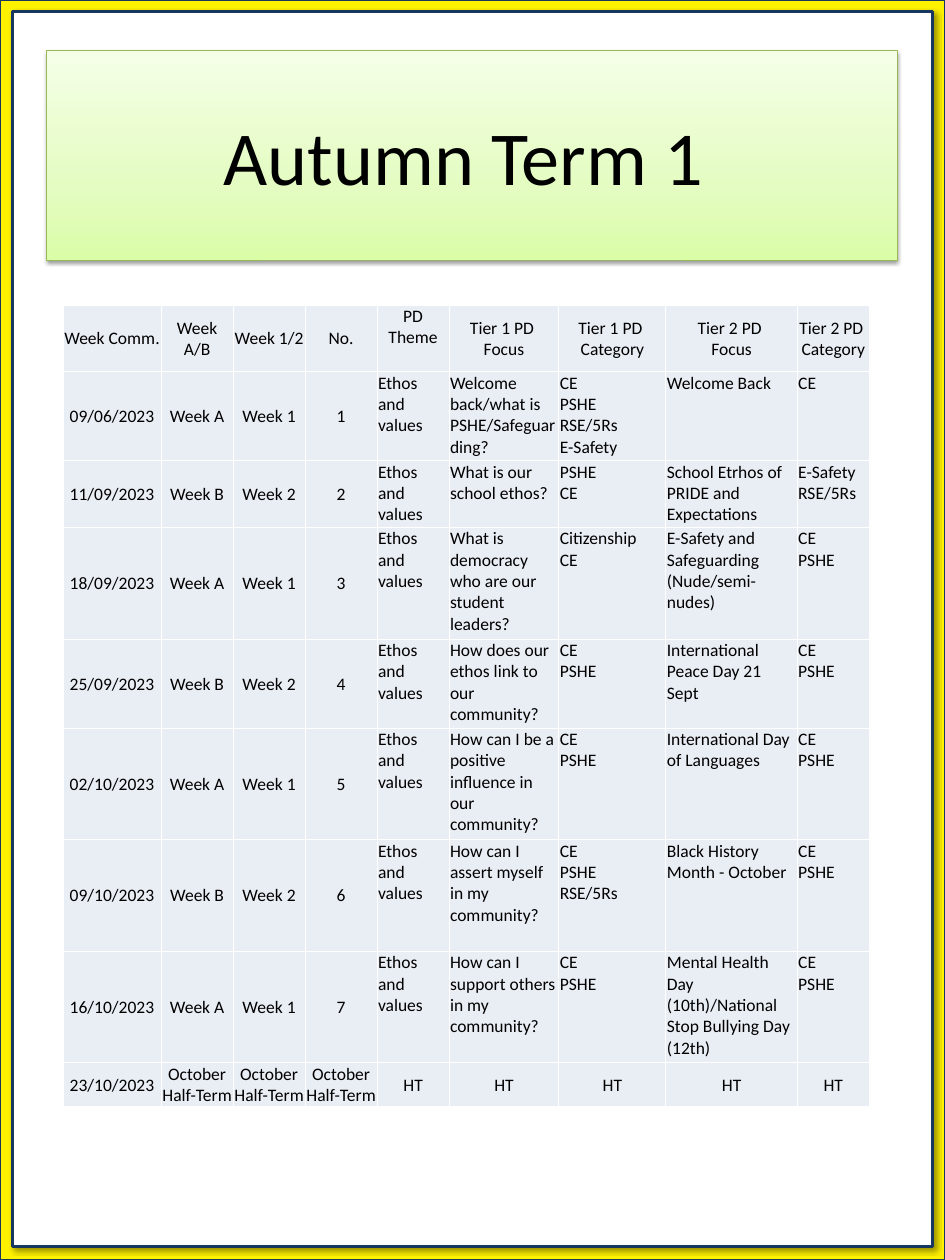
from copy import deepcopy
from dataclasses import dataclass

from pptx import Presentation, util as u
from pptx.dml.color import RGBColor
from pptx.enum import shapes, text
from pptx.oxml import parse_xml
from pptx.oxml.ns import nsdecls, qn


@dataclass(frozen=True)
class Theme:
    """Colours, font and type sizes of the slide."""
    font: str = "Calibri"
    title: int = 61
    body: int = 14
    ink: str = "000000"
    paper: str = "FFFFFF"
    frame: str = "FFF200"
    navy: str = "17375E"
    cell: str = "E9EDF4"
    edge: str = "98B955"
    greens: tuple = ((0, "DAFDA7"), (0.35, "E4FCC2"), (1, "F5FFE7"))


T = Theme()
WIDE, HIGH = u.Inches(10.5), u.Inches(14)
COLS = [10.38] + [7.62] * 4 + [11.62, 11.33, 13.9, 7.62]
ROWS = [5.29, 7.07, 5.29, 8.86, 7.07, 8.86, 8.86, 8.86, 3.29]
HEAD = ["Week Comm.", "Week A/B", "Week 1/2", "No.", "PD Theme", "Tier 1 PD \nFocus",
        "Tier 1 PD \nCategory", "Tier 2 PD \nFocus", "Tier 2 PD \nCategory"]
WEEKS = [
    ("09/06/2023", "Welcome back/what is PSHE/Safeguarding?", "CE\nPSHE\nRSE/5Rs\nE-Safety",
     "Welcome Back", "CE"),
    ("11/09/2023", "What is our school ethos?", "PSHE\nCE",
     "School Etrhos of PRIDE and Expectations", "E-Safety\nRSE/5Rs"),
    ("18/09/2023", "What is democracy who are our student leaders?", "Citizenship\nCE",
     "E-Safety and Safeguarding (Nude/semi-nudes)", "CE\nPSHE"),
    ("25/09/2023", "How does our ethos link to our community?", "CE\nPSHE",
     "International Peace Day 21 Sept", "CE\nPSHE"),
    ("02/10/2023", "How can I be a positive influence in our community?", "CE\nPSHE",
     "International Day of Languages", "CE\nPSHE"),
    ("09/10/2023", "How can I assert myself in my community?", "CE\nPSHE\nRSE/5Rs",
     "Black History Month - October", "CE\nPSHE"),
    ("16/10/2023", "How can I support others in my community?", "CE\nPSHE",
     "Mental Health Day (10th)/National Stop Bullying Day (12th)", "CE\nPSHE"),
]
BREAK = ["23/10/2023"] + ["October Half-Term"] * 3 + ["HT"] * 5


def across(share):
    """Turn a percentage of the slide width into a length."""
    return int(WIDE * share / 100)


def down(share):
    """Turn a percentage of the slide height into a length."""
    return int(HIGH * share / 100)


def tint(code):
    """Make a colour from its hex code."""
    return RGBColor.from_string(code)


def style(para, size, align):
    """Format a paragraph and its runs."""
    para.alignment = align
    for run in para.runs:
        run.font.name, run.font.size = T.font, u.Pt(size)
        run.font.color.rgb = tint(T.ink)


def shade(shape, alpha, blur, dist, angle):
    """Give a shape a soft outer shadow."""
    shape.shadow.inherit = False
    glow = shape._element.spPr.find(qn("a:effectLst"))
    glow.append(parse_xml(
        f'<a:outerShdw {nsdecls("a")} blurRad="{u.Pt(blur)}" dist="{u.Pt(dist)}" '
        f'dir="{angle * 60000}" algn="tl" rotWithShape="0"><a:srgbClr val="{T.ink}">'
        f'<a:alpha val="{alpha * 1000}"/></a:srgbClr></a:outerShdw>'))


def panel(slide, x, y, w, h, fill):
    """Draw a navy-edged rectangle."""
    shape = slide.shapes.add_shape(
        shapes.MSO_SHAPE.RECTANGLE, across(x), down(y), across(w), down(h))
    shape.shadow.inherit = False
    shape.fill.solid()
    shape.fill.fore_color.rgb = tint(fill)
    shape.line.color.rgb, shape.line.width = tint(T.navy), u.Pt(2.25)
    return shape


def blend(shape, stops):
    """Fill a shape with a gradient that rises from its foot."""
    shape.fill.gradient()
    shape.fill.gradient_angle = 90
    stack = shape._element.spPr.find(".//" + qn("a:gsLst"))
    for _ in stops[2:]:
        stack.append(deepcopy(stack[0]))
    for stop, (place, code) in zip(shape.fill.gradient_stops, stops):
        stop.position, stop.color.rgb = place, tint(code)


def banner(slide, words):
    """Place the title placeholder in front as a green banner."""
    title = slide.shapes.title
    slide.shapes._spTree.append(title._element)
    title.left, title.top = across(4.95), down(4)
    title.width, title.height = across(90), down(16.64)
    blend(title, T.greens)
    title.line.color.rgb, title.line.width = tint(T.edge), u.Pt(0.75)
    shade(title, 38, 3.1, 1.6, 90)
    frame = title.text_frame
    frame.text = words
    frame.word_wrap, frame.auto_size = True, text.MSO_AUTO_SIZE.NONE
    frame.vertical_anchor = text.MSO_ANCHOR.MIDDLE
    style(frame.paragraphs[0], T.title, text.PP_ALIGN.CENTER)


def rule(cell):
    """Draw thin white borders round a cell."""
    props = cell._tc.get_or_add_tcPr()
    for spot, side in enumerate("LRTB"):
        props.insert(spot, parse_xml(
            f'<a:ln{side} {nsdecls("a")} w="{u.Pt(1)}"><a:solidFill>'
            f'<a:srgbClr val="{T.paper}"/></a:solidFill></a:ln{side}>'))


def write(cell, words, mid, top):
    """Fill a cell with text, centred or set from the left."""
    cell.margin_left = cell.margin_right = cell.margin_top = u.Inches(0.01)
    cell.margin_bottom = 0
    cell.vertical_anchor = text.MSO_ANCHOR.TOP if top else text.MSO_ANCHOR.MIDDLE
    cell.fill.solid()
    cell.fill.fore_color.rgb = tint(T.cell)
    para = cell.text_frame.paragraphs[0]
    para.text = words
    style(para, T.body, text.PP_ALIGN.CENTER if mid else text.PP_ALIGN.LEFT)
    rule(cell)


def lines():
    """List the table rows, with the weeks alternating."""
    body = [[date, f"Week {'AB'[i % 2]}", f"Week {i % 2 + 1}", str(i + 1),
             "Ethos and values", *rest] for i, (date, *rest) in enumerate(WEEKS)]
    return [HEAD, *body, BREAK]


def plan(slide):
    """Build the table of weeks."""
    grid = slide.shapes.add_table(
        len(ROWS), len(COLS), across(6.67), down(24.21),
        across(sum(COLS)), down(sum(ROWS))).table
    grid.first_row = grid.horz_banding = False
    for col, share in zip(grid.columns, COLS):
        col.width = across(share)
    for row, share in zip(grid.rows, ROWS):
        row.height = down(share)
    for r, line in enumerate(lines()):
        for c, words in enumerate(line):
            mid = c < 4 or line is HEAD or line is BREAK
            write(grid.cell(r, c), words, mid, not mid or words == "PD Theme")


def main():
    """Build and save the slide."""
    deck = Presentation()
    deck.slide_width, deck.slide_height = WIDE, HIGH
    slide = deck.slides.add_slide(deck.slide_layouts[5])
    panel(slide, 0, 0, 100, 100, T.frame)
    shade(panel(slide, 1.33, 0.93, 97.33, 98, T.paper), 40, 4, 3, 45)
    banner(slide, "Autumn Term 1 ")
    plan(slide)
    deck.save("out.pptx")


if __name__ == "__main__":
    main()
